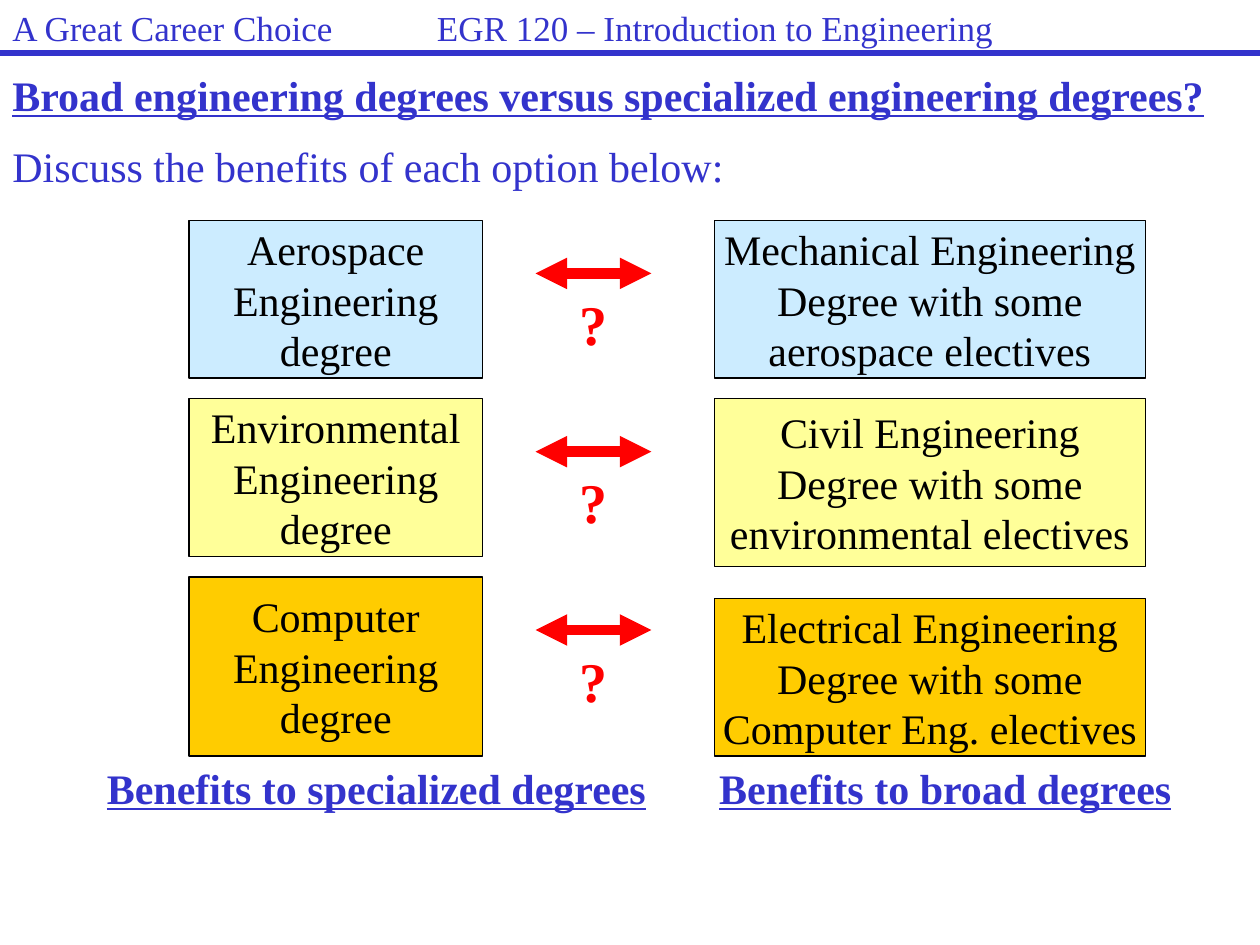
from lxml.etree import SubElement
from pptx import Presentation
from pptx.dml.color import RGBColor
from pptx.enum.shapes import MSO_CONNECTOR as Connector, MSO_SHAPE as Shape
from pptx.enum.text import MSO_ANCHOR as Anchor, MSO_AUTO_SIZE as AutoSize, PP_ALIGN as Align
from pptx.oxml.ns import qn
from pptx.util import Inches, Pt

FONT = "Times New Roman"
BLUE, RED, BLACK = "3333CC", "FF0000", "000000"
ROW_TOP, ROW_PITCH = 1.75, 1.415
SPECIALIZED_LEFT, SPECIALIZED_WIDTH = 1.5, 2.33
BROAD_LEFT, BROAD_WIDTH = 5.67, 3.42

# fill, specialized degree, its height, broad degree, its top offset and height
COMPARISONS = [
    ("CCECFF", "Aerospace\nEngineering\ndegree", 1.25,
     "Mechanical Engineering\nDegree with some\naerospace electives", 0, 1.25),
    ("FFFF99", "Environmental\nEngineering\ndegree", 1.25,
     "Civil Engineering\nDegree with some\nenvironmental electives", 0, 1.33),
    ("FFCC00", "Computer\nEngineering\ndegree", 1.42,
     "Electrical Engineering\nDegree with some\nComputer Eng. electives", 0.17, 1.25),
]


def rgb(color):
    return RGBColor.from_string(color)


def style_font(font, size, color, bold=False, underline=False):
    font.name = FONT
    font.size = Pt(size)
    font.color.rgb = rgb(color)
    font.bold = bold
    font.underline = underline


def add_text_box(slide, left, top, width, height, wrap=True, grow=True):
    frame = slide.shapes.add_textbox(
        Inches(left), Inches(top), Inches(width), Inches(height)).text_frame
    frame.word_wrap = wrap
    frame.auto_size = AutoSize.SHAPE_TO_FIT_TEXT if grow else AutoSize.NONE
    return frame


def add_tab_stop(paragraph, position):
    tabs = SubElement(paragraph._p.get_or_add_pPr(), qn("a:tabLst"))
    SubElement(tabs, qn("a:tab"), pos=str(Inches(position)), algn="l")


def add_line(slide, start, end, color, width, arrows=False):
    line = slide.shapes.add_connector(
        Connector.STRAIGHT, *(Inches(value) for value in (*start, *end)))
    line.line.color.rgb = rgb(color)
    line.line.width = Pt(width)
    if arrows:
        outline = line.line._get_or_add_ln()
        for end_tag in ("a:headEnd", "a:tailEnd"):
            SubElement(outline, qn(end_tag), type="triangle")
    SubElement(line._element.spPr, qn("a:effectLst"))


def add_degree_box(slide, left, top, width, height, fill, text):
    box = slide.shapes.add_shape(
        Shape.RECTANGLE, Inches(left), Inches(top), Inches(width), Inches(height))
    box.shadow.inherit = False
    box.fill.solid()
    box.fill.fore_color.rgb = rgb(fill)
    box.line.color.rgb = rgb(BLACK)
    box.line.width = Pt(0.75)
    frame = box.text_frame
    frame.word_wrap = False
    frame.vertical_anchor = Anchor.MIDDLE
    frame.text = text
    for paragraph in frame.paragraphs:
        paragraph.alignment = Align.CENTER
        style_font(paragraph.font, 24, BLACK)


def add_question_arrow(slide, top):
    """Add the double arrow and question mark between two degrees."""
    add_line(slide, (4.25, top + 0.42), (5.17, top + 0.42), RED, 6, arrows=True)
    frame = add_text_box(slide, 4.5, top + 0.5, 0.42, 0.63, wrap=False)
    frame.text = "?"
    style_font(frame.paragraphs[0].font, 32, RED, bold=True)


def add_introduction(slide):
    frame = add_text_box(slide, 0, 0.5, 10, 1.11)
    frame.text = ("Broad engineering degrees versus specialized engineering degrees?\n"
                  "Discuss the benefits of each option below:")
    for paragraph, is_title in zip(frame.paragraphs, (True, False)):
        paragraph.space_before = Pt(12)
        style_font(paragraph.font, 24, BLUE, bold=is_title, underline=is_title)


def add_benefit_headings(slide):
    paragraph = add_text_box(slide, 0.75, 6, 8.92, 0.5).paragraphs[0]
    paragraph.space_before = Pt(12)
    add_tab_stop(paragraph, 4.86)
    for text, is_heading in (("Benefits to specialized degrees", True), ("\t", False),
                             ("Benefits to broad degrees", True)):
        run = paragraph.add_run()
        run.text = text
        style_font(run.font, 24, BLUE, bold=is_heading, underline=is_heading)


def add_header(slide):
    add_line(slide, (0, 0.42), (10, 0.42), BLUE, 3)
    frame = add_text_box(slide, 0, 0, 10, 0.42, grow=False)
    frame.text = "A Great Career Choice\tEGR 120 – Introduction to Engineering"
    paragraph = frame.paragraphs[0]
    paragraph.space_before = Pt(4)
    add_tab_stop(paragraph, 3.37)
    style_font(paragraph.font, 20, BLUE)


def main():
    prs = Presentation()
    prs.slide_width, prs.slide_height = Inches(10), Inches(7.5)
    slide = prs.slides.add_slide(prs.slide_layouts[6])

    add_introduction(slide)
    for row, (fill, specialized, height, broad, offset, broad_height) in enumerate(COMPARISONS):
        top = ROW_TOP + row * ROW_PITCH
        add_degree_box(slide, SPECIALIZED_LEFT, top, SPECIALIZED_WIDTH, height,
                       fill, specialized)
        add_degree_box(slide, BROAD_LEFT, top + offset, BROAD_WIDTH, broad_height,
                       fill, broad)
        add_question_arrow(slide, top)
    add_benefit_headings(slide)
    add_header(slide)

    prs.save("out.pptx")


if __name__ == "__main__":
    main()
